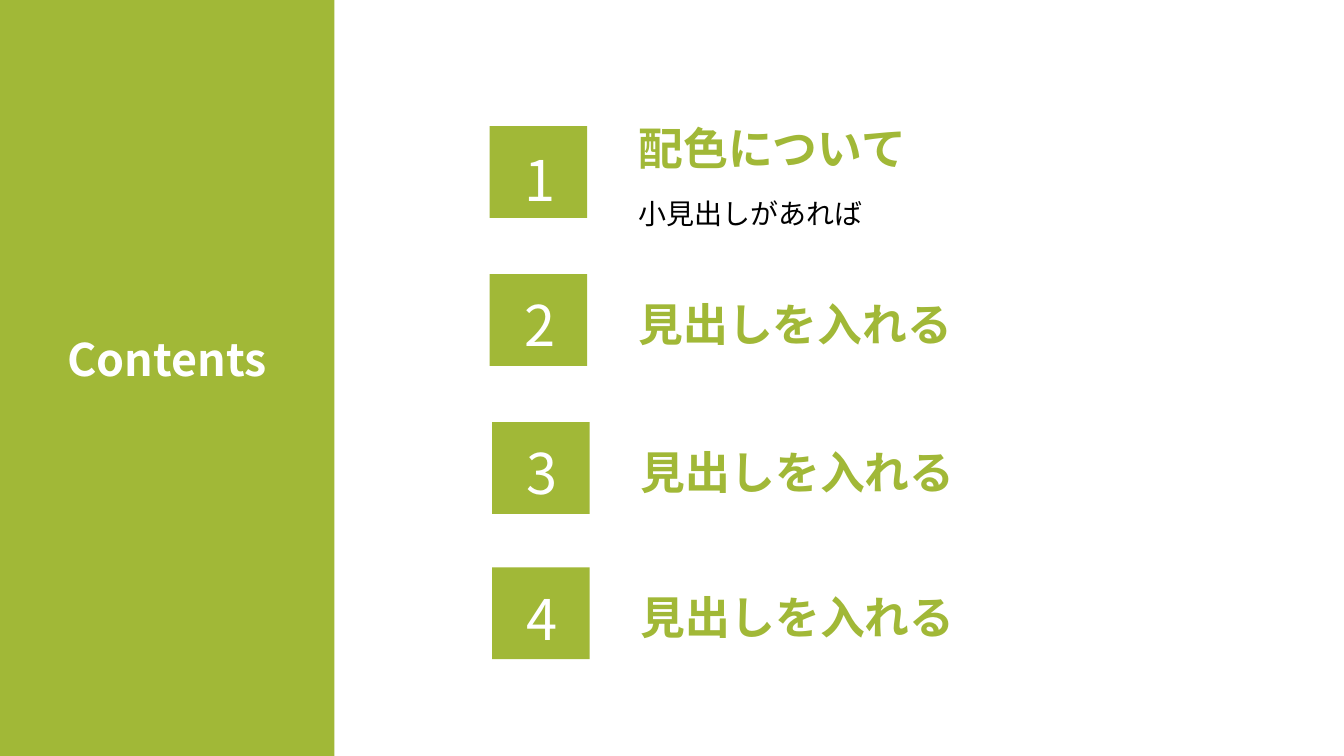
from dataclasses import dataclass

from lxml.etree import SubElement
from pptx import Presentation
from pptx.dml.color import RGBColor
from pptx.enum.shapes import MSO_SHAPE as Shape
from pptx.enum.text import MSO_ANCHOR as Anchor, MSO_AUTO_SIZE as AutoSize, PP_ALIGN as Align
from pptx.oxml.ns import qn
from pptx.util import Cm, Pt

COLORS = {"green": "A1B837", "white": "FFFFFF", "black": "000000"}
FONT = "Noto Sans CJK JP"
BOX_W, BOX_H = 2.46, 2.31
SIDE_W = 8.43


@dataclass
class Line:
    text: str
    size: int
    color: str
    bold: bool = False
    spacing: int | None = 40
    align: Align = Align.LEFT


@dataclass
class Item:
    left: float
    top: float
    lines: list[Line]
    text_dy: float = 0.38
    text_h: float = 1.68
    number_dy: float = 0.58


def heading(text: str, spacing: int = 40) -> Line:
    return Line(text, 32, "green", True, spacing)


def rgb(name: str) -> RGBColor:
    return RGBColor.from_string(COLORS[name])


def fill_text(tf, lines: list[Line], wrap: bool = True) -> None:
    tf.word_wrap = wrap
    tf.auto_size = AutoSize.SHAPE_TO_FIT_TEXT
    tf.vertical_anchor = Anchor.TOP
    for i, line in enumerate(lines):
        p = tf.add_paragraph() if i else tf.paragraphs[0]
        p.text = line.text
        p.alignment = line.align
        p.space_before = Pt(0)
        p.line_spacing = Pt(line.spacing) if line.spacing else 1.0
        f = p.font
        f.name, f.size, f.bold = FONT, Pt(line.size), line.bold
        f.color.rgb = rgb(line.color)
        # Japanese glyphs use the East Asian font slot
        props = p._p.get_or_add_pPr().find(qn("a:defRPr"))
        SubElement(props, qn("a:ea"), typeface=FONT)


def add_rect(shapes, left: float, top: float, width: float, height: float):
    sp = shapes.add_shape(Shape.RECTANGLE, Cm(left), Cm(top), Cm(width), Cm(height))
    sp.shadow.inherit = False
    sp.fill.solid()
    sp.fill.fore_color.rgb = rgb("green")
    sp.line.fill.background()
    return sp


def add_text(shapes, left: float, top: float, width: float, height: float,
             lines: list[Line], wrap: bool = True) -> None:
    sp = shapes.add_textbox(Cm(left), Cm(top), Cm(width), Cm(height))
    fill_text(sp.text_frame, lines, wrap)


def add_item(shapes, number: int, item: Item) -> None:
    add_rect(shapes, item.left, item.top, BOX_W, BOX_H)
    add_text(shapes, item.left + 3.5, item.top + item.text_dy, 17.04, item.text_h, item.lines)
    digit = Line(str(number), 40, "white", align=Align.CENTER)
    add_text(shapes, item.left + 0.56, item.top + item.number_dy, 1.4, 1.75, [digit], wrap=False)


ITEMS = [
    Item(12.34, 3.18,
         [heading("配色について", 28), Line("小見出しがあれば", 20, "black")],
         text_dy=0.1, text_h=2.62, number_dy=0.64),
    Item(12.34, 6.91, [heading("見出しを入れる")]),
    Item(12.4, 10.64, [heading("見出しを入れる")]),
    Item(12.4, 14.3, [heading("見出しを入れる")]),
]


def main() -> None:
    prs = Presentation()
    prs.slide_width, prs.slide_height = Cm(33.87), Cm(19.05)
    slide = prs.slides.add_slide(prs.slide_layouts[5])
    shapes = slide.shapes

    # Side panel, with the title in front of it
    panel = add_rect(shapes, 0, 0, SIDE_W, 19.05)
    title = shapes.title
    panel.element.addnext(title.element)
    title.left, title.top, title.width, title.height = Cm(0), Cm(8.23), Cm(SIDE_W), Cm(1.63)
    fill_text(title.text_frame, [Line("Contents", 32, "white", True, None, Align.CENTER)])

    # Numbered contents
    for number, item in enumerate(ITEMS, 1):
        add_item(shapes, number, item)

    prs.save("out.pptx")


if __name__ == "__main__":
    main()
